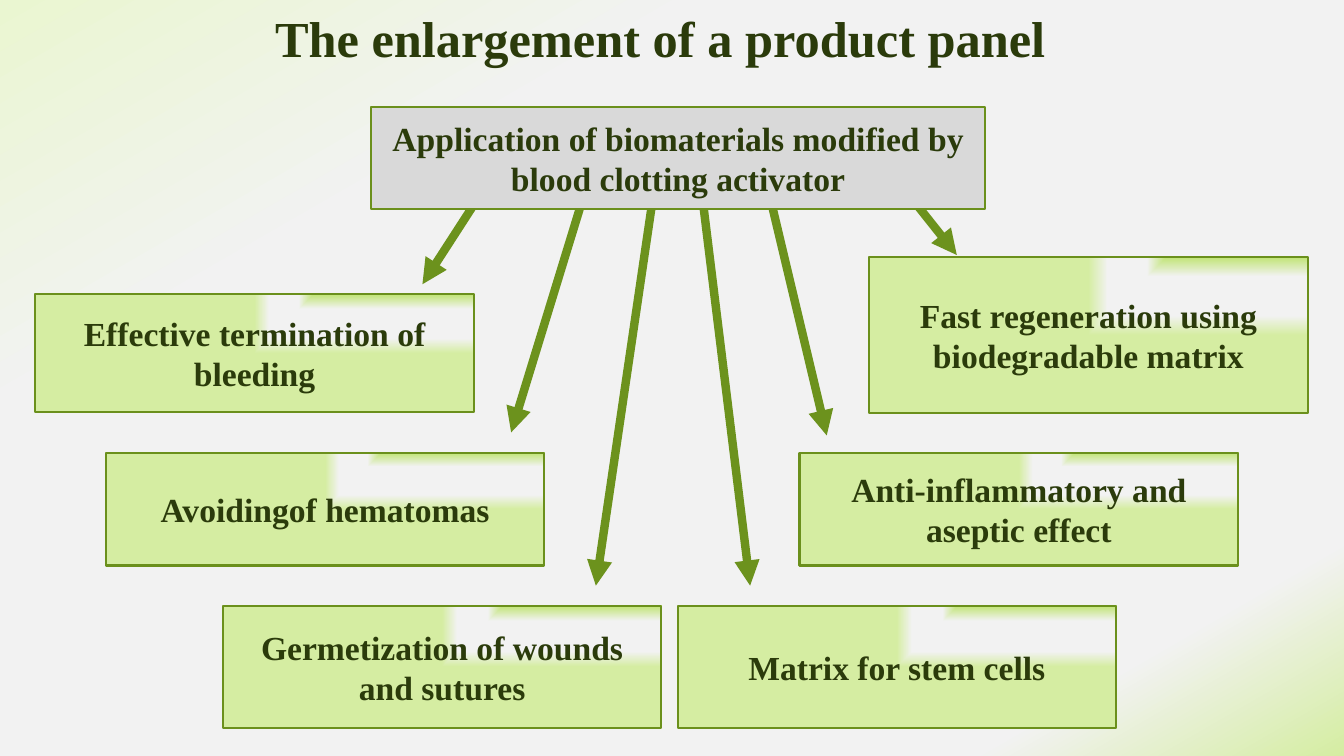
from pptx import Presentation
from pptx.dml.color import RGBColor
from pptx.enum.shapes import MSO_CONNECTOR, MSO_SHAPE
from pptx.enum.text import MSO_ANCHOR, MSO_AUTO_SIZE, PP_ALIGN
from pptx.oxml import parse_xml
from pptx.oxml.ns import nsdecls, qn
from pptx.util import Inches, Pt

FONT = "Times New Roman"
INK, EDGE, ARROW, GREY = "2B3B0B", "6B901C", "6C921D", "D9D9D9"
BACK = [(0, "EAF6D1"), (27, "F2F2F2"), (86, "F2F2F2"), (100, "D5EDA2")]
GLOW = [(0, "C0E474"), (25, "F2F2F2"), (75, "F2F2F2"), (100, "D5EDA2")]
SLANT = '<a:lin ang="3600000" scaled="0"/>'
CORNER = '<a:path path="rect"><a:fillToRect l="100000" b="100000"/></a:path>'

WIDE = 4.35
CARDS = [
    ("Effective termination of bleeding", (0.35, 2.92, WIDE, 1.17)),
    ("Fast regeneration using biodegradable matrix", (8.62, 2.55, WIDE, 1.55)),
    ("Avoidingof hematomas", (1.05, 4.49, WIDE, 1.12)),
    ("Anti-inflammatory and aseptic effect", (7.93, 4.49, WIDE, 1.12)),
    ("Germetization of wounds and sutures", (2.21, 6.01, WIDE, 1.21)),
    ("Matrix for stem cells", (6.72, 6.01, WIDE, 1.21)),
]
ARROWS = [
    ((4.81, 1.86), (4.19, 2.82)),
    ((5.75, 2.07), (5.07, 4.29)),
    ((6.46, 2.07), (5.91, 5.81)),
    ((6.98, 2.07), (7.44, 5.81)),
    ((7.65, 2.01), (8.2, 4.32)),
    ((8.71, 1.55), (9.49, 2.53)),
]


def color(code):
    """Turn a hex string into a colour."""
    return RGBColor.from_string(code)


def blend(fill, holder, stops, course):
    """Give the fill found in holder a gradient along the given course."""
    fill.solid()
    marks = "".join(
        f'<a:gs pos="{spot * 1000}"><a:srgbClr val="{code}"/></a:gs>'
        for spot, code in stops
    )
    grade = parse_xml(
        f'<a:gradFill {nsdecls("a")} rotWithShape="1">'
        f"<a:gsLst>{marks}</a:gsLst>{course}</a:gradFill>"
    )
    holder.replace(holder.find(qn("a:solidFill")), grade)


def write(frame, text, size=24, anchor=MSO_ANCHOR.MIDDLE, fit=MSO_AUTO_SIZE.NONE):
    """Put bold centred text into a frame."""
    frame.word_wrap = True
    frame.auto_size = fit
    frame.vertical_anchor = anchor
    line = frame.paragraphs[0]
    line.alignment = PP_ALIGN.CENTER
    run = line.add_run()
    run.text = text
    run.font.name = FONT
    run.font.size = Pt(size)
    run.font.bold = True
    run.font.color.rgb = color(INK)


def title(slide, text, box):
    """Place the slide title in its box."""
    label = slide.shapes.add_textbox(*map(Inches, box))
    write(label.text_frame, text, size=36, anchor=MSO_ANCHOR.TOP,
          fit=MSO_AUTO_SIZE.SHAPE_TO_FIT_TEXT)


def card(slide, text, box, shade=None):
    """Place a framed card, plain if a shade is given and blended if not."""
    shape = slide.shapes.add_shape(MSO_SHAPE.RECTANGLE, *map(Inches, box))
    shape.shadow.inherit = False
    shape.line.color.rgb = color(EDGE)
    shape.line.width = Pt(1.5)
    if shade:
        shape.fill.solid()
        shape.fill.fore_color.rgb = color(shade)
    else:
        blend(shape.fill, shape.element.spPr, GLOW, CORNER)
    write(shape.text_frame, text)


def arrow(slide, start, end):
    """Draw a thick arrow from start to end."""
    link = slide.shapes.add_connector(
        MSO_CONNECTOR.STRAIGHT, *map(Inches, start + end))
    link.line.color.rgb = color(ARROW)
    link.line.width = Pt(6)
    props = link.element.spPr
    props.find(qn("a:ln")).append(
        parse_xml(f'<a:tailEnd {nsdecls("a")} type="triangle"/>'))
    props.append(parse_xml(f'<a:effectLst {nsdecls("a")}/>'))


def main():
    """Build the slide and save it."""
    deck = Presentation()
    deck.slide_width, deck.slide_height = Inches(13.33), Inches(7.5)
    slide = deck.slides.add_slide(deck.slide_layouts[6])
    fill = slide.background.fill
    fill.solid()
    blend(fill, slide.element.find(".//" + qn("p:bgPr")), BACK, SLANT)
    for text, box in CARDS:
        card(slide, text, box)
    for start, end in ARROWS:
        arrow(slide, start, end)
    title(slide, "The enlargement of a product panel", (1.17, 0.02, 10.76, 0.71))
    card(slide, "Application of biomaterials modified by blood clotting activator",
         (3.68, 1.06, 6.09, 1.01), shade=GREY)
    deck.save("out.pptx")


if __name__ == "__main__":
    main()
